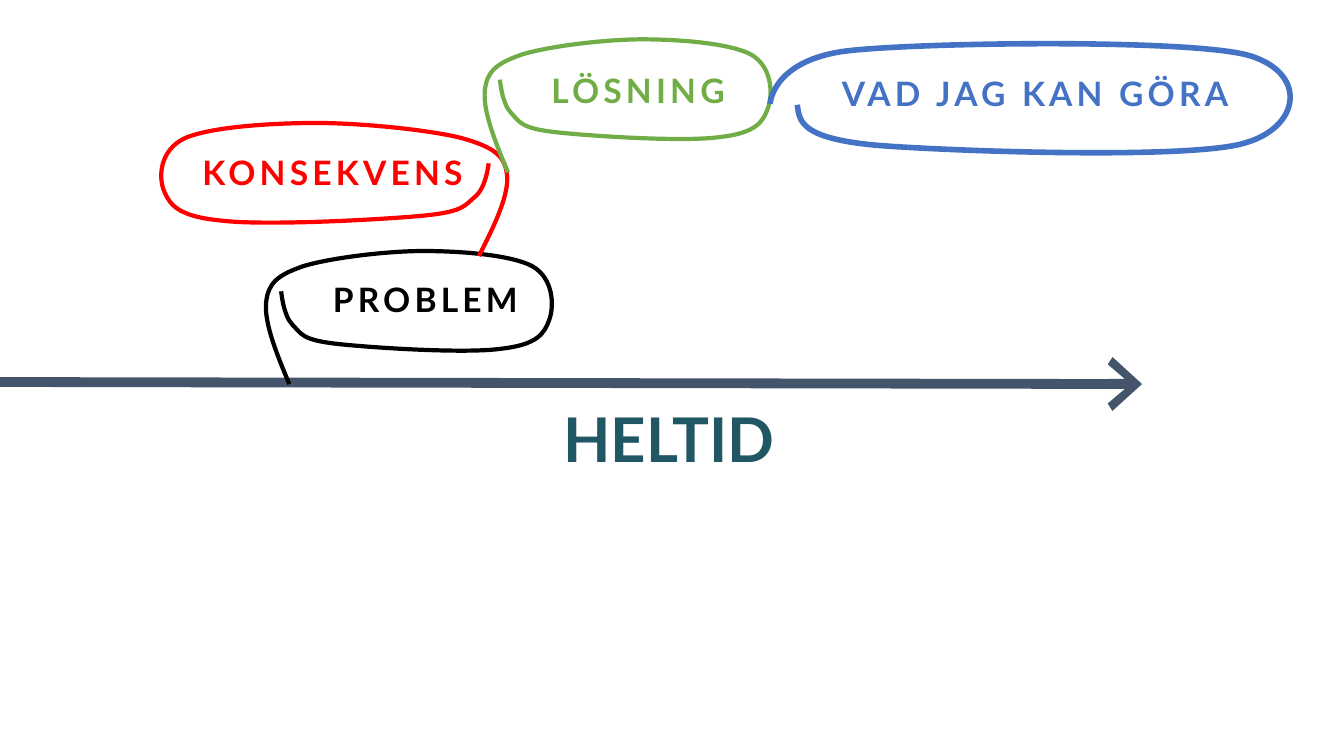
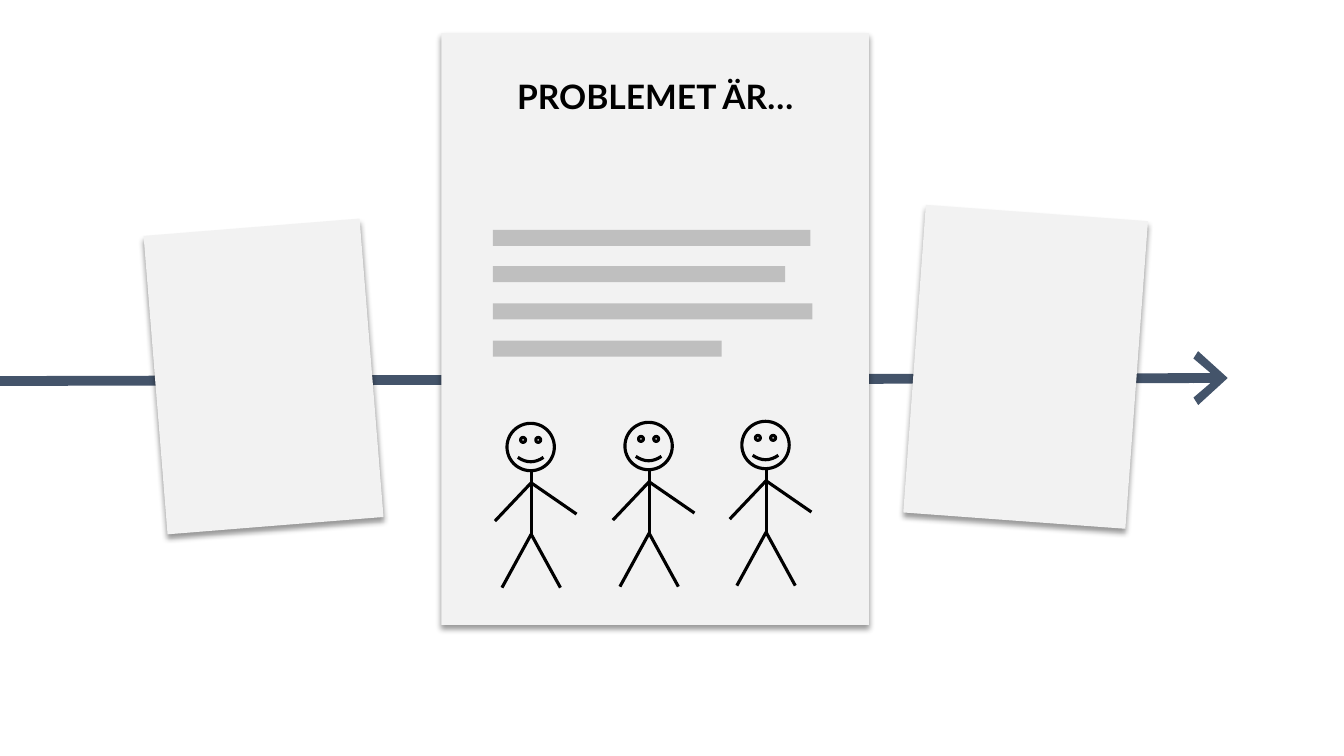
from lxml import etree
from pptx import Presentation
from pptx import util as u
from pptx.dml.color import RGBColor
from pptx.enum import shapes, text
from pptx.oxml.ns import qn

BLACK = RGBColor(0, 0, 0)
WHITE = RGBColor(0xFF, 0xFF, 0xFF)
RED = RGBColor(0xFF, 0, 0)
GREEN = RGBColor(0x70, 0xAD, 0x47)
BLUE = RGBColor(0x44, 0x72, 0xC4)
SLATE = RGBColor(0x44, 0x54, 0x6A)
TEAL = RGBColor(0x21, 0x57, 0x65)
PAPER = RGBColor(0xF2, 0xF2, 0xF2)
GREY = RGBColor(0xBF, 0xBF, 0xBF)
FONT = "Lato"

HOOK = [
    (0.23, 1.32),
    (0.1, 1.01), (-0.02, 0.71), (0, 0.51),
    (0.02, 0.32), (0.11, 0.24), (0.37, 0.15),
    (0.63, 0.07), (1.19, 0), (1.56, 0),
    (1.94, 0), (2.43, 0.04), (2.64, 0.15),
    (2.85, 0.27), (2.86, 0.54), (2.81, 0.68),
    (2.76, 0.82), (2.69, 0.93), (2.33, 0.97),
    (1.98, 1.02), (1.04, 0.96), (0.69, 0.92),
    (0.35, 0.88), (0.35, 0.82), (0.26, 0.73),
    (0.17, 0.64), (0.15, 0.4), (0.15, 0.4),
]
LOOP = [
    (0.27, 0.61),
    (0.29, 0.78), (0.31, 0.94), (1.04, 1.01),
    (1.77, 1.07), (4.06, 1.15), (4.67, 1),
    (5.28, 0.85), (5.35, 0.27), (4.71, 0.11),
    (4.06, -0.04), (1.59, -0.01), (0.81, 0.07),
    (0.02, 0.15), (0, 0.6), (0, 0.6),
]
LIMBS = [
    ((0.24, 1.1), (0.24, 0.47)),
    ((-0.12, 0.97), (0.24, 0.59)),
    ((0.69, 0.9), (0.24, 0.59)),
    ((-0.05, 1.63), (0.24, 1.1)),
    ((0.53, 1.63), (0.24, 1.1)),
]


def inches(*vals):
    return [u.Inches(v) for v in vals]


def write(area, words, size=24, color=BLACK, gap=0, lead=None,
          anchor=text.MSO_ANCHOR.MIDDLE):
    frame = area.text_frame
    frame.word_wrap = True
    frame.vertical_anchor = anchor
    para = frame.paragraphs[0]
    para.alignment = text.PP_ALIGN.CENTER
    para.line_spacing = lead
    run = para.add_run()
    run.text = words
    run.font.name = FONT
    run.font.size = u.Pt(size)
    run.font.bold = True
    run.font.color.rgb = color
    if gap:
        run.font._element.set("spc", str(gap * 100))


def line(slide, start, end, color=BLACK, width=2.25, arrow=False):
    link = slide.shapes.add_connector(
        shapes.MSO_CONNECTOR.STRAIGHT, *inches(*start, *end))
    link.line.color.rgb = color
    link.line.width = u.Pt(width)
    props = link._element.spPr
    if arrow:
        etree.SubElement(props.find(qn("a:ln")), qn("a:tailEnd"),
                         type="arrow", w="lg", len="med")
    etree.SubElement(props, qn("a:effectLst"))


def block(slide, box, fill, turn=0):
    rect = slide.shapes.add_shape(shapes.MSO_SHAPE.RECTANGLE, *inches(*box))
    rect.shadow.inherit = False
    rect.fill.solid()
    rect.fill.fore_color.rgb = fill
    rect.line.fill.background()
    rect.rotation = turn
    return rect


def sheet(slide, box, turn=0):
    rect = block(slide, box, PAPER, turn)
    glow = etree.SubElement(
        rect._element.spPr.find(qn("a:effectLst")), qn("a:outerShdw"),
        blurRad=str(u.Pt(4)), dist=str(u.Pt(3)), dir="5400000",
        algn="t", rotWithShape="0")
    tint = etree.SubElement(glow, qn("a:srgbClr"), val=str(BLACK))
    etree.SubElement(tint, qn("a:alpha"), val="40000")


def outline(shape, color, width):
    shape.shadow.inherit = False
    shape.fill.background()
    shape.line.color.rgb = color
    shape.line.width = u.Pt(width)


def curve(slide, knots, left, top, color, width=3, scale=1):
    dots = [inches(left + x * scale, top + y) for x, y in knots]
    pen = slide.shapes.build_freeform(*dots[0], scale=1.0)
    pen.add_line_segments(dots[3::3], close=False)
    path = pen.convert_to_shape()
    outline(path, color, width)
    legs = list(path._element.iter(qn("a:lnTo")))
    for i, leg in enumerate(legs):
        arc = etree.Element(qn("a:cubicBezTo"))
        for x, y in dots[3 * i + 1:3 * i + 4]:
            etree.SubElement(arc, qn("a:pt"), x=str(x - path.left),
                             y=str(y - path.top))
        leg.getparent().replace(leg, arc)


def label(slide, words, box, color, size=24, gap=3):
    write(block(slide, box, WHITE), words, size=size, color=color, gap=gap,
          lead=0.9)


def figure(slide, left, top):
    head = slide.shapes.add_shape(
        shapes.MSO_SHAPE.SMILEY_FACE, *inches(left, top, 0.47, 0.47))
    outline(head, BLACK, 2.25)
    for ends in LIMBS:
        line(slide, *[(left + x, top + y) for x, y in ends])


def chain(slide):
    line(slide, (0, 3.79), (11.33, 3.81), SLATE, 7, arrow=True)
    label(slide, "HELTID", (5.47, 4.01, 2.34, 0.77), TEAL, size=44, gap=0)
    for words, box, left, top, scale, color in [
        ("PROBLEM", (3.05, 2.61, 2.34, 0.77), 2.64, 2.49, 1, BLACK),
        ("KONSEKVENS", (1.59, 1.35, 3.42, 0.77), 5.03, 1.22, -1.21, RED),
        ("LÖSNING", (4.62, 0.53, 3.42, 0.77), 4.81, 0.39, 1, GREEN),
    ]:
        label(slide, words, box, color)
        curve(slide, HOOK, left, top, color, scale=scale)
    label(slide, "VAD JAG KAN GÖRA", (8.21, 0.56, 4.12, 0.77), BLUE)
    curve(slide, LOOP, 7.64, 0.43, BLUE, width=4)


def poster(slide):
    line(slide, (0, 3.78), (12.18, 3.75), SLATE, 7, arrow=True)
    sheet(slide, (9.07, 2.11, 2.21, 3.06), 4.2)
    sheet(slide, (1.54, 2.25, 2.15, 2.97), 355.4)
    sheet(slide, (4.38, 0.33, 4.24, 5.87))
    title = slide.shapes.add_textbox(*inches(4.38, 0.7, 4.24, 0.5))
    write(title, "PROBLEMET ÄR…", anchor=text.MSO_ANCHOR.TOP)
    for top, width in ((2.28, 3.15), (2.64, 2.9), (3.01, 3.17), (3.38, 2.27)):
        block(slide, (4.89, top, width, 0.16), GREY)
    for left, top in ((5.03, 4.2), (6.2, 4.19), (7.36, 4.18)):
        figure(slide, left, top)


def main():
    deck = Presentation()
    deck.slide_width, deck.slide_height = inches(40 / 3, 7.5)
    for draw in (chain, poster):
        draw(deck.slides.add_slide(deck.slide_layouts[6]))
    deck.save("out.pptx")


if __name__ == "__main__":
    main()
